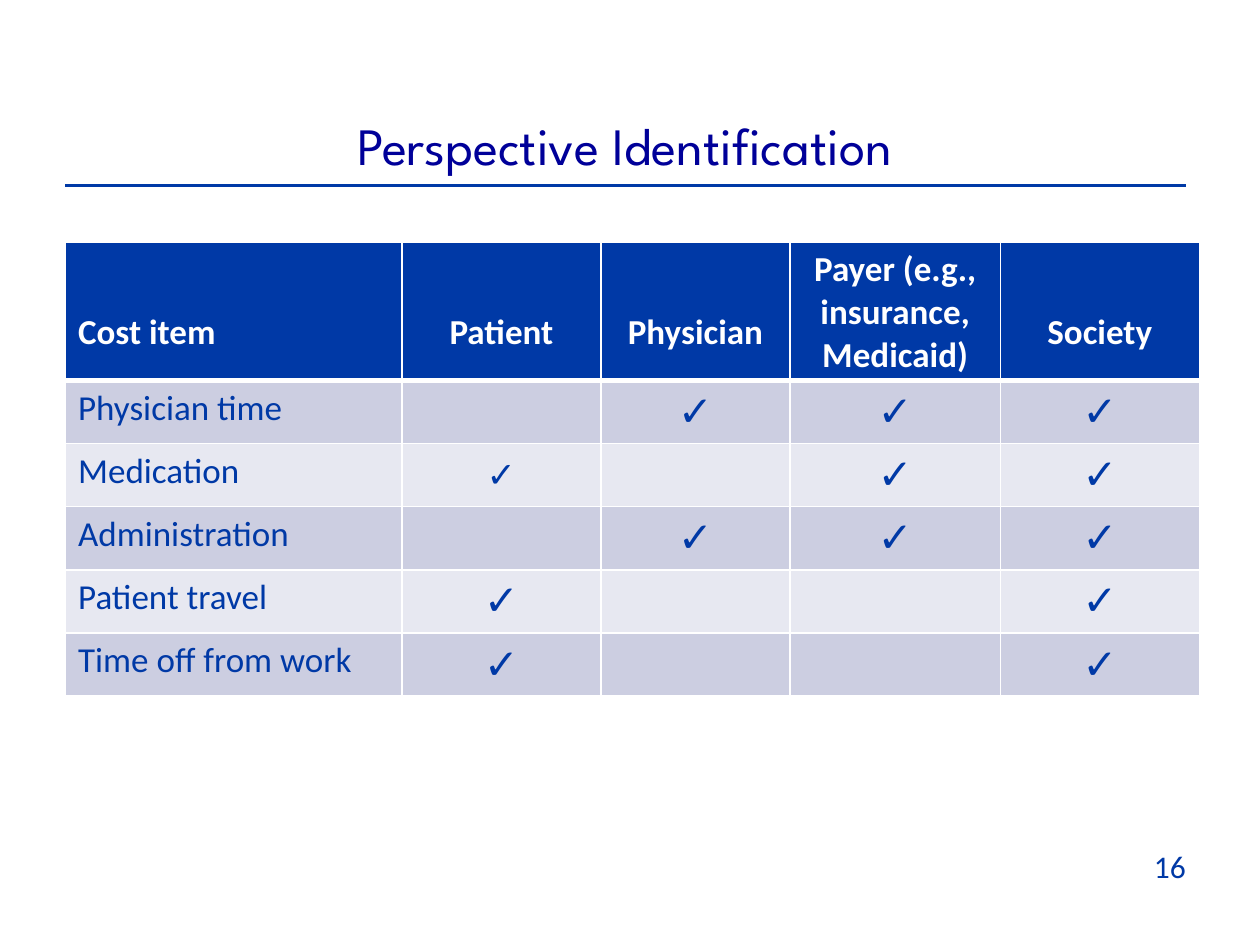
from dataclasses import dataclass

from lxml.etree import SubElement
from pptx import Presentation
from pptx.dml.color import RGBColor
from pptx.enum.shapes import MSO_CONNECTOR
from pptx.enum.text import MSO_ANCHOR, PP_ALIGN
from pptx.oxml.ns import qn
from pptx.util import Inches, Pt


@dataclass(frozen=True)
class Theme:
    title_font: str = "League Spartan"
    body_font: str = "Calibri"
    title_color: str = "000099"
    blue: str = "0039A6"
    white: str = "FFFFFF"
    bands: tuple = ("CCCEE1", "E7E8F1")
    title_size: int = 30
    table_size: int = 20
    check_size: int = 24
    number_size: int = 18


THEME = Theme()
CHECK = "✓"
COLUMN_WIDTHS = (2.67, 1.58, 1.5, 1.67, 1.58)
HEADER_HEIGHT = 1.1
ROW_HEIGHT = 0.5
CELL_MARGIN = 0.05
LINE_HEIGHT = 0.34
HEADERS = ("Cost item", "Patient", "Physician",
           "Payer (e.g., insurance, Medicaid)", "Society")
COST_ITEMS = {
    "Physician time": ("Physician", "Payer", "Society"),
    "Medication": ("Patient", "Payer", "Society"),
    "Administration": ("Physician", "Payer", "Society"),
    "Patient travel": ("Patient", "Society"),
    "Time off from work": ("Patient", "Society"),
}


def write_text(text_frame, text, size, color, font=THEME.body_font,
               align=PP_ALIGN.LEFT, bold=False):
    paragraph = text_frame.paragraphs[0]
    paragraph.alignment = align
    run = paragraph.add_run()
    run.text = text
    run.font.name = font
    run.font.size = Pt(size)
    run.font.bold = bold
    run.font.color.rgb = RGBColor.from_string(color)


def add_title(slide, text):
    title = slide.shapes.title
    title.left, title.top = Inches(0.31), Inches(0.85)
    title.width, title.height = Inches(9.3), Inches(0.61)
    title.text_frame.vertical_anchor = MSO_ANCHOR.TOP
    write_text(title.text_frame, text, THEME.title_size, THEME.title_color,
               THEME.title_font, PP_ALIGN.CENTER)


def add_rule(slide):
    rule = slide.shapes.add_connector(
        MSO_CONNECTOR.STRAIGHT, Inches(0.52), Inches(1.47), Inches(9.41), Inches(1.47))
    rule.line.color.rgb = RGBColor.from_string(THEME.blue)
    rule.line.width = Pt(1.75)
    SubElement(rule._element.spPr, qn("a:effectLst"))


def add_slide_number(slide, number):
    box = slide.shapes.add_textbox(Inches(7.18), Inches(6.67), Inches(2.33), Inches(0.52))
    box.text_frame.word_wrap = True
    write_text(box.text_frame, number, THEME.number_size, THEME.blue,
               align=PP_ALIGN.RIGHT)


def style_cell(cell, fill, top_width=1, bottom_width=1):
    """Give the cell white borders and a solid fill, in schema order."""
    properties = cell._tc.get_or_add_tcPr()
    widths = {"a:lnL": 1, "a:lnR": 1, "a:lnT": top_width, "a:lnB": bottom_width}
    for tag, width in widths.items():
        line = SubElement(properties, qn(tag), w=str(Pt(width)))
        solid = SubElement(line, qn("a:solidFill"))
        SubElement(solid, qn("a:srgbClr"), val=THEME.white)
    cell.fill.solid()
    cell.fill.fore_color.rgb = RGBColor.from_string(fill)


def fill_header(table):
    for column, text in enumerate(HEADERS):
        cell = table.cell(0, column)
        style_cell(cell, THEME.blue, bottom_width=3)
        cell.vertical_anchor = MSO_ANCHOR.MIDDLE
        if not text.startswith("Payer"):
            # Single-line headings sit one line lower.
            cell.margin_top = Inches(CELL_MARGIN + LINE_HEIGHT)
        write_text(cell.text_frame, text, THEME.table_size, THEME.white,
                   align=PP_ALIGN.CENTER if column else PP_ALIGN.LEFT, bold=True)


def fill_cost_row(table, row, item, payers):
    for column, header in enumerate(HEADERS):
        cell = table.cell(row, column)
        style_cell(cell, THEME.bands[(row - 1) % 2], top_width=3 if row == 1 else 1)
        if column == 0:
            write_text(cell.text_frame, item, THEME.table_size, THEME.blue)
        elif header.split()[0] in payers:
            cell.vertical_anchor = MSO_ANCHOR.MIDDLE
            small = (item, header) == ("Medication", "Patient")
            write_text(cell.text_frame, CHECK,
                       THEME.table_size if small else THEME.check_size,
                       THEME.blue, align=PP_ALIGN.CENTER, bold=True)


def add_cost_table(slide):
    height = HEADER_HEIGHT + ROW_HEIGHT * len(COST_ITEMS)
    table = slide.shapes.add_table(
        len(COST_ITEMS) + 1, len(HEADERS), Inches(0.52), Inches(1.92),
        Inches(sum(COLUMN_WIDTHS)), Inches(height)).table
    for column, width in zip(table.columns, COLUMN_WIDTHS):
        column.width = Inches(width)
    for index, row in enumerate(table.rows):
        row.height = Inches(ROW_HEIGHT if index else HEADER_HEIGHT)
    fill_header(table)
    for row, (item, payers) in enumerate(COST_ITEMS.items(), start=1):
        fill_cost_row(table, row, item, payers)


def main():
    presentation = Presentation()
    presentation.slide_width, presentation.slide_height = Inches(10), Inches(7.5)
    slide = presentation.slides.add_slide(presentation.slide_layouts[5])
    add_title(slide, "Perspective Identification")
    add_rule(slide)
    add_slide_number(slide, "16")
    add_cost_table(slide)
    presentation.save("out.pptx")


if __name__ == "__main__":
    main()
